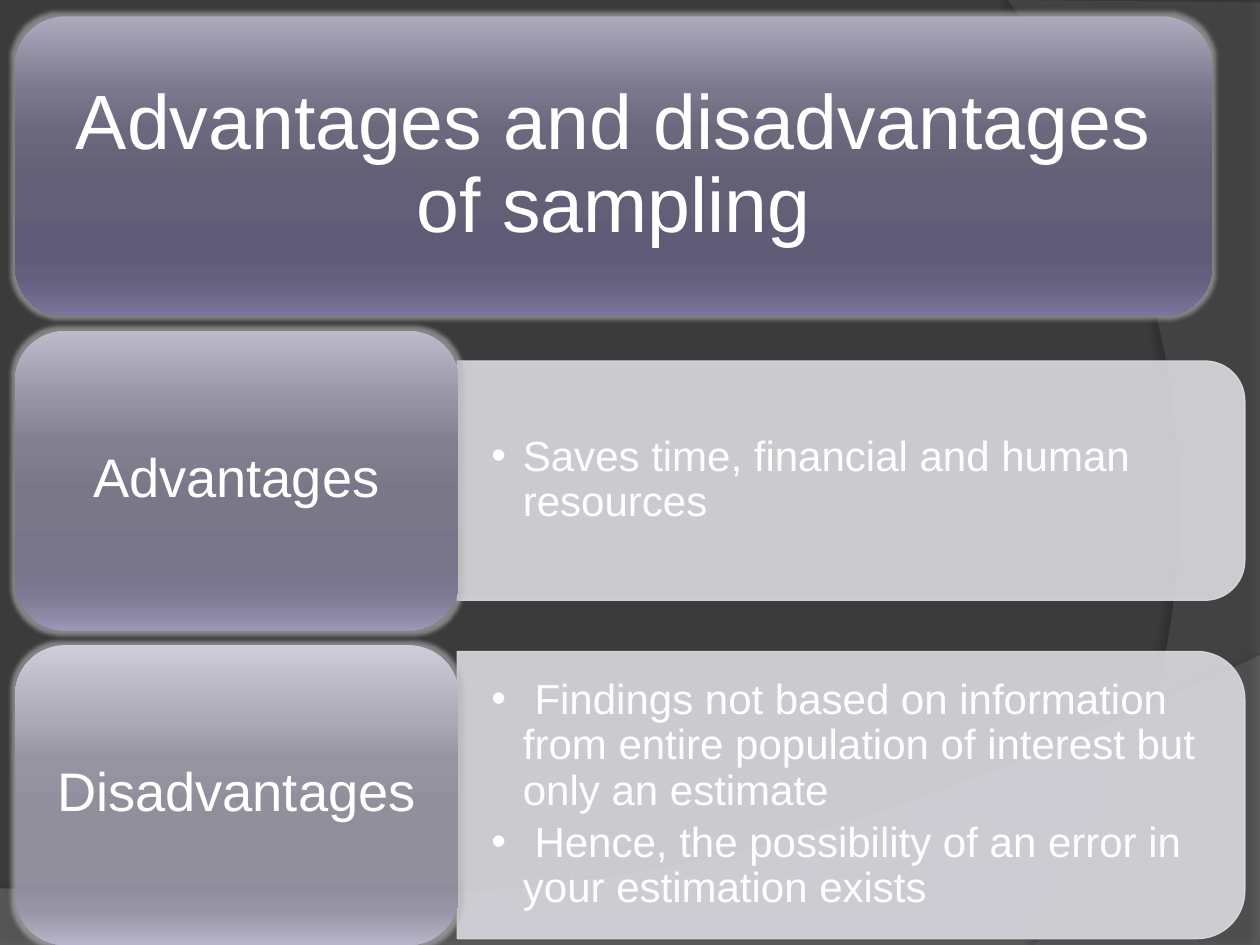
from lxml.etree import SubElement
from pptx import Presentation
from pptx.dml.color import RGBColor
from pptx.enum.shapes import MSO_SHAPE
from pptx.enum.text import MSO_ANCHOR, MSO_AUTO_SIZE, PP_ALIGN
from pptx.oxml.ns import qn
from pptx.util import Inches, Pt


def rgb(color):
    return RGBColor.from_string(color)


def add_xml(parent, tag, **attrs):
    return SubElement(parent, qn(tag), {k: str(v) for k, v in attrs.items()})


def curve(p0, p1, p2, p3, steps=32):
    """Points along a cubic curve, without its start."""
    ts = [i / steps for i in range(1, steps + 1)]
    return [tuple((1 - t) ** 3 * a + 3 * (1 - t) ** 2 * t * b
                  + 3 * (1 - t) * t ** 2 * c + t ** 3 * d
                  for a, b, c, d in zip(p0, p1, p2, p3)) for t in ts]


class SlideBuilder:
    font = "Arial"
    text_color = "FFFFFF"
    panel_color = "DBDAE0"
    glow_color = "B5B5B5"
    stops = (0, 25, 38, 55, 80, 88, 100)

    def __init__(self, slide):
        self.s = slide

    def set_alpha(self, fill_parent, percent):
        clr = fill_parent.find(qn("a:solidFill")).find(qn("a:srgbClr"))
        add_xml(clr, "a:alpha", val=percent * 1000)

    def add_effect(self, sp, tag, color, alpha, **attrs):
        sp.shadow.inherit = False
        effects = sp._element.spPr.find(qn("a:effectLst"))
        clr = add_xml(add_xml(effects, tag, **attrs), "a:srgbClr", val=color)
        add_xml(clr, "a:alpha", val=alpha * 1000)

    def swoosh(self, points, color, alpha, shadow_alpha, distance, angle):
        points = [(Inches(x), Inches(y)) for x, y in points]
        builder = self.s.shapes.build_freeform(*points[0], scale=1.0)
        builder.add_line_segments(points[1:], close=True)
        sp = builder.convert_to_shape()
        sp.fill.solid()
        sp.fill.fore_color.rgb = rgb(color)
        self.set_alpha(sp._element.spPr, alpha)
        sp.line.fill.background()
        self.add_effect(sp, "a:outerShdw", "000000", shadow_alpha,
                        blurRad=Pt(4), dist=Pt(distance), dir=angle * 60000)

    def block(self, left, top, width, height, colors):
        """Rounded block with a vertical gradient and a soft glow."""
        sp = self.s.shapes.add_shape(
            MSO_SHAPE.ROUNDED_RECTANGLE,
            Inches(left), Inches(top), Inches(width), Inches(height))
        sp.fill.gradient()
        sp.fill.gradient_angle = 270
        stops = sp._element.spPr.find(qn("a:gradFill")).find(qn("a:gsLst"))
        for old in list(stops):
            stops.remove(old)
        for pos, color in zip(self.stops, colors):
            stop = add_xml(stops, "a:gs", pos=pos * 1000)
            add_xml(stop, "a:srgbClr", val=color)
        sp.line.fill.background()
        self.add_effect(sp, "a:glow", self.glow_color, 60, rad=Pt(5))

    def panel(self, left, top, width, height):
        """Panel rounded on its right side: a turned top-rounded shape."""
        x = left + (width - height) / 2
        y = top + (height - width) / 2
        sp = self.s.shapes.add_shape(
            MSO_SHAPE.ROUND_2_SAME_RECTANGLE,
            Inches(x), Inches(y), Inches(height), Inches(width))
        sp.rotation = 90
        sp.shadow.inherit = False
        sp.line.width = Pt(0.75)
        for fill in (sp.fill, sp.line.fill):
            fill.solid()
            fill.fore_color.rgb = rgb(self.panel_color)
        spPr = sp._element.spPr
        self.set_alpha(spPr, 90)
        self.set_alpha(spPr.find(qn("a:ln")), 90)

    def frame(self, sp, left, top, width, height, inset):
        """Place a text shape in front and return its text frame."""
        sp.left, sp.top = Inches(left), Inches(top)
        sp.width, sp.height = Inches(width), Inches(height)
        self.s.shapes._spTree.append(sp._element)
        tf = sp.text_frame
        tf.word_wrap = True
        tf.auto_size = MSO_AUTO_SIZE.NONE
        tf.vertical_anchor = MSO_ANCHOR.MIDDLE
        tf.margin_left = tf.margin_right = Inches(inset)
        tf.margin_top = tf.margin_bottom = Inches(inset / 2)
        return tf

    def style(self, p, size):
        p.font.name = self.font
        p.font.size = Pt(size)
        p.font.color.rgb = rgb(self.text_color)

    def caption(self, sp, text, box, inset, size):
        p = self.frame(sp, *box, inset).paragraphs[0]
        p.text = text
        p.alignment = PP_ALIGN.CENTER
        p.line_spacing = 0.9
        self.style(p, size)

    def label(self, text, box):
        sp = self.s.shapes.add_textbox(0, 0, 0, 0)
        self.caption(sp, text, box, 0.13, 31)

    def bullets(self, sp, items, box):
        tf = self.frame(sp, *box, 0.27)
        for i, item in enumerate(items):
            p = tf.add_paragraph() if i else tf.paragraphs[0]
            p.text = item
            p.alignment = PP_ALIGN.LEFT
            p.line_spacing = 0.9
            p.space_before = Pt(0)
            p.space_after = Pt(4)
            pPr = p._p.get_or_add_pPr()
            pPr.set("marL", str(Inches(0.25)))
            pPr.set("indent", str(-Inches(0.25)))
            add_xml(pPr, "a:buFont", typeface=self.font)
            add_xml(pPr, "a:buChar", char="•")
            self.style(p, 24)


def main():
    prs = Presentation()
    prs.slide_width, prs.slide_height = Inches(10), Inches(7.5)
    s = prs.slides.add_slide(prs.slide_layouts[3])
    title, *bodies = list(s.placeholders)[:3]
    b = SlideBuilder(s)

    # Background with two swooshes
    s.background.fill.solid()
    s.background.fill.fore_color.rgb = rgb("3B3B3B")
    b.swoosh([(0, 7.05), (0, 7.51), (10, 7.51), (10, 5.2)]
             + curve((10, 5.2), (5.59, 7.29), (3.91, 7.19), (0, 7.05)),
             "7F7F7F", 45, 35, 3.5, 270)
    b.swoosh([(10, 0.02), (10, 7.5), (8.21, 7.5)]
             + curve((8.21, 7.5), (9.35, 6.19), (10.18, 3), (8, 0)),
             "5E5E5E", 40, 45, 4, 180)

    # Header
    left, top, height, pitch, pad = 0.12, 0.13, 2.38, 2.495, 0.115
    b.block(left, top, 9.5, height,
            ("ADAABD", "7B788D", "6B687D", "635F76",
             "605C78", "646080", "7C779C"))
    b.caption(title, "Advantages and disadvantages of sampling",
              (left + pad, top + pad, 9.27, 2.14), 0.18, 44)

    # Rows: label, gradient, panel height, text width, bullet points
    rows = [
        ("Advantages",
         ("BCBACB", "9391A2", "807E8F", "7A7789",
          "78748A", "7D7993", "9A96B3"),
         1.9, 6.16, ["Saves time, financial and human resources"]),
        ("Disadvantages",
         ("CECCD9", "ACAAB6", "9694A0", "918F9C",
          "8F8D9C", "9693A5", "B8B5CA"),
         2.28, 6.14,
         [" Findings not based on information from entire population "
          "of interest but only an estimate",
          " Hence, the possibility of an error in your estimation exists"]),
    ]
    for i, (name, colors, panel_h, text_w, items) in enumerate(rows, 1):
        y = top + i * pitch
        middle = y + height / 2
        text_h = panel_h - 0.2
        b.panel(3.63, middle - panel_h / 2, 6.25, panel_h)
        b.bullets(bodies[i - 1], items,
                  (3.63, middle - text_h / 2, text_w, text_h))
        b.block(left, y, 3.52, height, colors)
        b.label(name, (left + pad, y + pad, 3.28, 2.14))

    prs.save("out.pptx")


if __name__ == "__main__":
    main()
